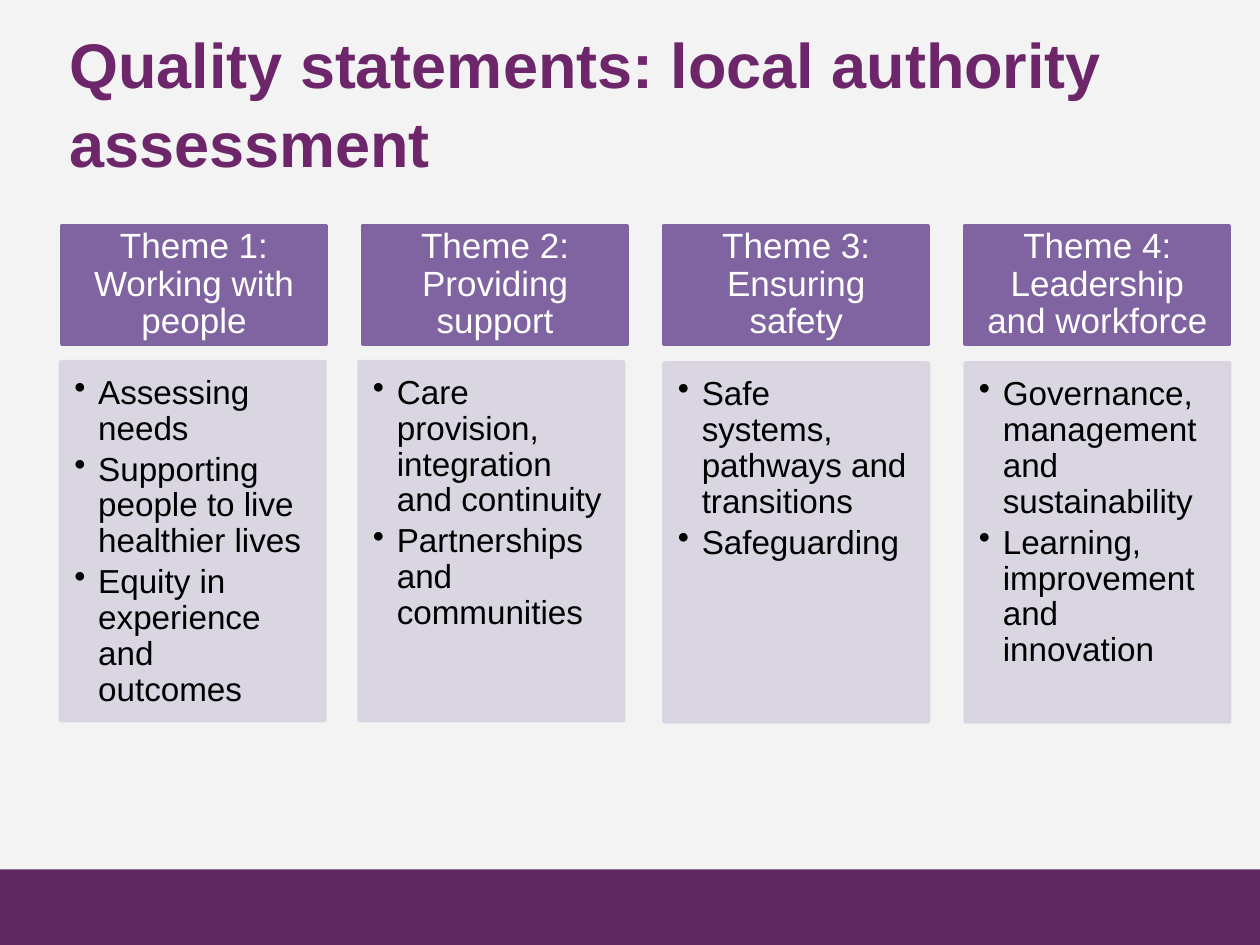
from dataclasses import dataclass

from lxml.etree import SubElement
from pptx import Presentation
from pptx.dml.color import RGBColor
from pptx.enum.shapes import MSO_SHAPE
from pptx.enum.text import MSO_ANCHOR, PP_ALIGN
from pptx.oxml.ns import qn
from pptx.util import Inches, Pt

THEME_LEFT, THEME_PITCH, THEME_WIDTH = 0.49, 2.39, 2.1


@dataclass
class Theme:
    heading: str
    statements: list[str]
    list_left: float
    list_top: float


THEMES = [
    Theme("Theme 1: Working with people",
          ["Assessing needs", "Supporting people to live healthier lives",
           "Equity in experience and outcomes"], 0.48, 2.87),
    Theme("Theme 2: Providing support",
          ["Care provision, integration and continuity",
           "Partnerships and communities"], 2.85, 2.87),
    Theme("Theme 3: Ensuring safety",
          ["Safe systems, pathways and transitions", "Safeguarding"], 5.27, 2.88),
    Theme("Theme 4: Leadership and workforce",
          ["Governance, management and sustainability",
           "Learning, improvement and innovation"], 7.66, 2.88),
]


def colour(value: str) -> RGBColor:
    """Turn a hex string into a colour."""
    return RGBColor.from_string(value)


def apply_format(target, values: dict) -> None:
    """Set every attribute named in the format values."""
    for name, value in values.items():
        setattr(target, name, value)


def set_frame(shape, insets: tuple, anchor=MSO_ANCHOR.TOP):
    """Set wrapping, anchor and insets, and return the text frame."""
    frame = shape.text_frame
    sides = ("margin_left", "margin_top", "margin_right", "margin_bottom")
    apply_format(frame, {"word_wrap": True, "vertical_anchor": anchor})
    apply_format(frame, {side: Inches(inset) for side, inset in zip(sides, insets)})
    return frame


def write(para, text: str, size: float, hex_colour: str, layout: dict, bold=False) -> None:
    """Write one formatted paragraph."""
    apply_format(para, layout)
    span = para.add_run()
    span.text = text
    apply_format(span.font, {"name": "Arial", "size": Pt(size), "bold": bold})
    span.font.color.rgb = colour(hex_colour)


def add_box(page, area: tuple, fill: str, line_width: float = 0, opacity: int = 100):
    """Add a plain rectangle with a matching outline."""
    box = page.shapes.add_shape(MSO_SHAPE.RECTANGLE, *map(Inches, area))
    box.shadow.inherit = False
    box.fill.solid()
    box.fill.fore_color.rgb = colour(fill)
    if line_width:
        box.line.color.rgb = colour(fill)
        box.line.width = Pt(line_width)
    else:
        box.line.fill.background()
    if opacity < 100:
        for paint in box._element.spPr.iter(qn("a:srgbClr")):
            SubElement(paint, qn("a:alpha"), val=str(opacity * 1000))
    return box


def add_bullet(para) -> None:
    """Give a paragraph a hanging round bullet."""
    properties = para._p.get_or_add_pPr()
    properties.set("marL", str(Inches(0.19)))
    properties.set("indent", str(Inches(-0.19)))
    SubElement(properties, qn("a:buChar"), char="•")


def add_title(page, text: str) -> None:
    """Add the page title."""
    box = page.shapes.add_textbox(*map(Inches, (0.48, 0.11, 9, 1.09)))
    frame = set_frame(box, (0.07, 0.07, 0.07, 0.04))
    write(frame.paragraphs[0], text, 36, "6C2669", {"line_spacing": 1.04}, bold=True)


def add_theme(page, theme: Theme, left: float) -> None:
    """Add a theme heading and its list of quality statements."""
    heading = add_box(page, (left, 1.79, THEME_WIDTH, 0.94), "8064A2", 2)
    frame = set_frame(heading, (0.16, 0.09, 0.16, 0.09), MSO_ANCHOR.MIDDLE)
    write(frame.paragraphs[0], theme.heading, 20, "FFFFFF",
          {"alignment": PP_ALIGN.CENTER, "line_spacing": 0.9})

    area = (theme.list_left, theme.list_top, THEME_WIDTH, 2.85)
    panel = add_box(page, area, "D8D3E0", 2, opacity=90)
    frame = set_frame(panel, (0.11, 0.11, 0.15, 0.17))
    for index, statement in enumerate(theme.statements):
        para = frame.add_paragraph() if index else frame.paragraphs[0]
        add_bullet(para)
        write(para, statement, 19, "000000",
              {"alignment": PP_ALIGN.LEFT, "line_spacing": 0.9, "space_after": Pt(2.85)})


def main() -> None:
    """Build and save the deck."""
    deck = Presentation()
    apply_format(deck, {"slide_width": Inches(10), "slide_height": Inches(7.5)})
    page = deck.slides.add_slide(deck.slide_layouts[6])
    page.background.fill.solid()
    page.background.fill.fore_color.rgb = colour("F3F3F3")
    add_box(page, (0, 6.9, 10, 0.6), "5F2861")
    add_title(page, "Quality statements: local authority assessment")
    for index, theme in enumerate(THEMES):
        add_theme(page, theme, THEME_LEFT + index * THEME_PITCH)
    deck.save("out.pptx")


if __name__ == "__main__":
    main()
